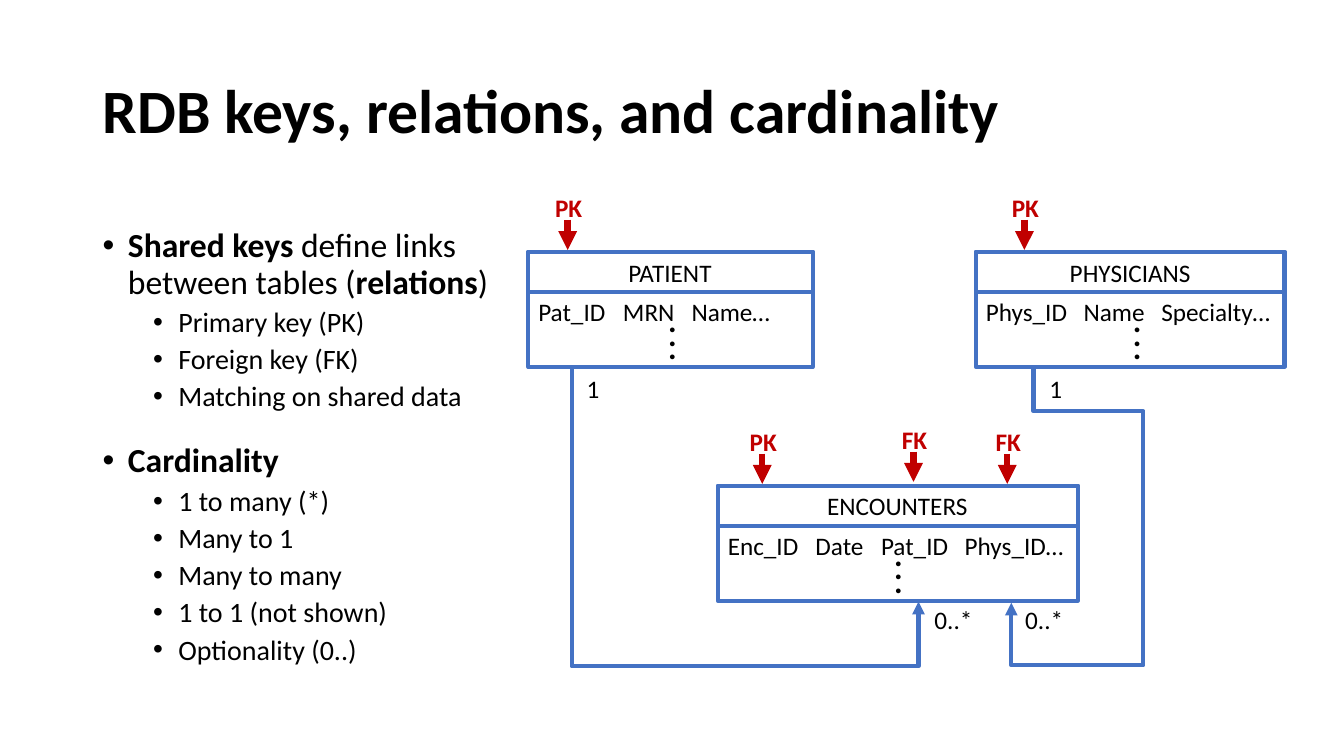
import pptx
import pptx.util
import pptx.dml.color
import pptx.enum.shapes
import pptx.enum.text
import pptx.oxml
import pptx.oxml.ns

Inches, Pt = pptx.util.Inches, pptx.util.Pt
ALIGN = pptx.enum.text.PP_ALIGN
ANCHOR = pptx.enum.text.MSO_ANCHOR
FONT, BLACK, BLUE, RED = "Calibri", "000000", "4472C4", "C00000"

TITLE = "RDB keys, relations, and cardinality"
OUTLINE = [
    ([("Shared keys", True), (" define links between tables (", False),
      ("relations", True), (")", False)], 10,
     ["Primary key (PK)", "Foreign key (FK)", "Matching on shared data"]),
    ([("Cardinality", True)], 22,
     ["1 to many (*)", "Many to 1", "Many to many", "1 to 1 (not shown)",
      "Optionality (0..)"]),
]
ENTITIES = [
    {"name": "PATIENT", "left": 5.24, "top": 2.5, "width": 2.82, "name_center": 6.645,
     "fields": ["Pat_ID", "MRN", "Name…"], "stops": [0.84, 1.52], "dots": 6.67},
    {"name": "PHYSICIANS", "left": 9.68, "top": 2.5, "width": 3.06, "name_center": 11.21,
     "fields": ["Phys_ID", "Name", "Specialty…"], "stops": [0.97, 1.74], "dots": 11.28},
    {"name": "ENCOUNTERS", "left": 7.12, "top": 4.82, "width": 3.57, "name_center": 8.9,
     "fields": ["Enc_ID", "Date", "Pat_ID", "Phys_ID…"], "stops": [0.87, 1.52, 2.35],
     "dots": 8.91},
]
KEYS = [("FK", 9.06, 4.48), ("FK", 9.99, 4.5), ("PK", 5.63, 2.18),
        ("PK", 10.16, 2.18), ("PK", 7.56, 4.5)]
CARDINALITIES = [("1", 5.72, 3.65), ("1", 10.31, 3.65),
                 ("0..*", 9.17, 5.95), ("0..*", 10.07, 5.95)]
RELATIONS = [
    [(5.67, 3.65), (5.67, 6.61), (9.11, 6.61), (9.11, 5.97)],
    [(10.25, 3.64), (10.25, 4.08), (11.34, 4.08), (11.34, 6.6), (10.03, 6.6), (10.03, 5.98)],
]
HEADER_HEIGHT, ENTITY_HEIGHT, ARROW_LENGTH = 0.4, 1.14, 0.3

deck = pptx.Presentation()
deck.slide_width, deck.slide_height = Inches(13.33), Inches(7.5)
slide = deck.slides.add_slide(deck.slide_layouts[6])


def color(hex_code):
    return pptx.dml.color.RGBColor.from_string(hex_code)


def element(parent, tag, **attributes):
    child = pptx.oxml.parse_xml(f"<a:{tag} {pptx.oxml.ns.nsdecls('a')}/>")
    for key, value in attributes.items():
        child.set(key, str(value))
    parent.append(child)
    return child


def style(paragraph, size, hex_code=BLACK, bold=None):
    font = paragraph.font
    font.name, font.size, font.bold = FONT, Pt(size), bold
    font.color.rgb = color(hex_code)


def text_frame(left, top, width, height, anchor=ANCHOR.TOP):
    frame = slide.shapes.add_textbox(
        Inches(left), Inches(top), Inches(width), Inches(height)).text_frame
    frame.word_wrap, frame.vertical_anchor = True, anchor
    return frame


def label(text, left, top, width, height=0.4, size=18, hex_code=BLACK, bold=False,
          align=ALIGN.LEFT):
    frame = text_frame(left, top, width, height)
    frame.text = text
    for paragraph in frame.paragraphs:
        paragraph.alignment = align
        style(paragraph, size, hex_code, bold)
    return frame


def outline(shape, hex_code, weight):
    shape.line.color.rgb = color(hex_code)
    shape.line.width = Pt(weight)


def arrowhead(shape):
    element(shape.line._get_or_add_ln(), "tailEnd", type="triangle")


def frame_box(left, top, width, height):
    box = slide.shapes.add_shape(pptx.enum.shapes.MSO_SHAPE.RECTANGLE,
                                 Inches(left), Inches(top), Inches(width), Inches(height))
    box.shadow.inherit = False
    box.fill.background()
    outline(box, BLUE, 3)


def bullet(paragraph, indent, before, size):
    paragraph.line_spacing = 0.9
    paragraph.space_before = Pt(before)
    properties = paragraph._p.get_or_add_pPr()
    properties.set("marL", str(Inches(indent)))
    properties.set("indent", str(Inches(-0.25)))
    element(properties, "buFont", typeface="Arial")
    element(properties, "buChar", char="•")
    style(paragraph, size)


def draw_outline():
    frame = text_frame(0.92, 2.22, 4.15, 4.88)
    for number, (heading, before, details) in enumerate(OUTLINE):
        paragraph = frame.add_paragraph() if number else frame.paragraphs[0]
        for text, bold in heading:
            run = paragraph.add_run()
            run.text, run.font.bold = text, bold
        bullet(paragraph, 0.25, before, 24)
        for detail in details:
            paragraph = frame.add_paragraph()
            paragraph.text, paragraph.level = detail, 1
            bullet(paragraph, 0.75, 5, 20)


def draw_entity(entity):
    left, top, width = entity["left"], entity["top"], entity["width"]
    frame_box(left, top, width, ENTITY_HEIGHT)
    label(entity["name"], entity["name_center"] - 0.9, top, 1.8, align=ALIGN.CENTER)
    fields = label("\t".join(entity["fields"]), left, top + HEADER_HEIGHT - 0.01, width)
    fields.margin_right = 0
    tabs = element(fields.paragraphs[0]._p.get_or_add_pPr(), "tabLst")
    for stop in entity["stops"]:
        element(tabs, "tab", pos=Inches(stop), algn="l")
    properties = tabs.getparent()
    properties.insert(0, tabs)
    frame_box(left, top, width, HEADER_HEIGHT)
    label("•\n•\n•", entity["dots"] - 0.185, top + 0.65, 0.37, 0.5, 8, bold=True,
          align=ALIGN.CENTER)


def draw_key(kind, x, top):
    label(kind, x - 0.29, top - 0.32, 0.6, hex_code=RED, bold=True, align=ALIGN.CENTER)
    arrow = slide.shapes.add_connector(
        pptx.enum.shapes.MSO_CONNECTOR.STRAIGHT,
        Inches(x), Inches(top), Inches(x), Inches(top + ARROW_LENGTH))
    element(arrow._element.spPr, "effectLst")
    outline(arrow, RED, 4.5)
    arrowhead(arrow)


def draw_relation(points):
    (start_x, start_y), *rest = points
    builder = slide.shapes.build_freeform(Inches(start_x), Inches(start_y))
    builder.add_line_segments([(Inches(x), Inches(y)) for x, y in rest], close=False)
    relation = builder.convert_to_shape()
    relation.shadow.inherit = False
    relation.fill.background()
    outline(relation, BLUE, 3)
    arrowhead(relation)


title = text_frame(0.92, 0.4, 11.5, 1.45, ANCHOR.MIDDLE)
title.text = TITLE
title.paragraphs[0].line_spacing = 0.9
style(title.paragraphs[0], 44, bold=True)
draw_outline()
for entity in ENTITIES:
    draw_entity(entity)
for text, left, top in CARDINALITIES:
    label(text, left, top, 0.6)
for key in KEYS:
    draw_key(*key)
for relation in RELATIONS:
    draw_relation(relation)

deck.save("out.pptx")
